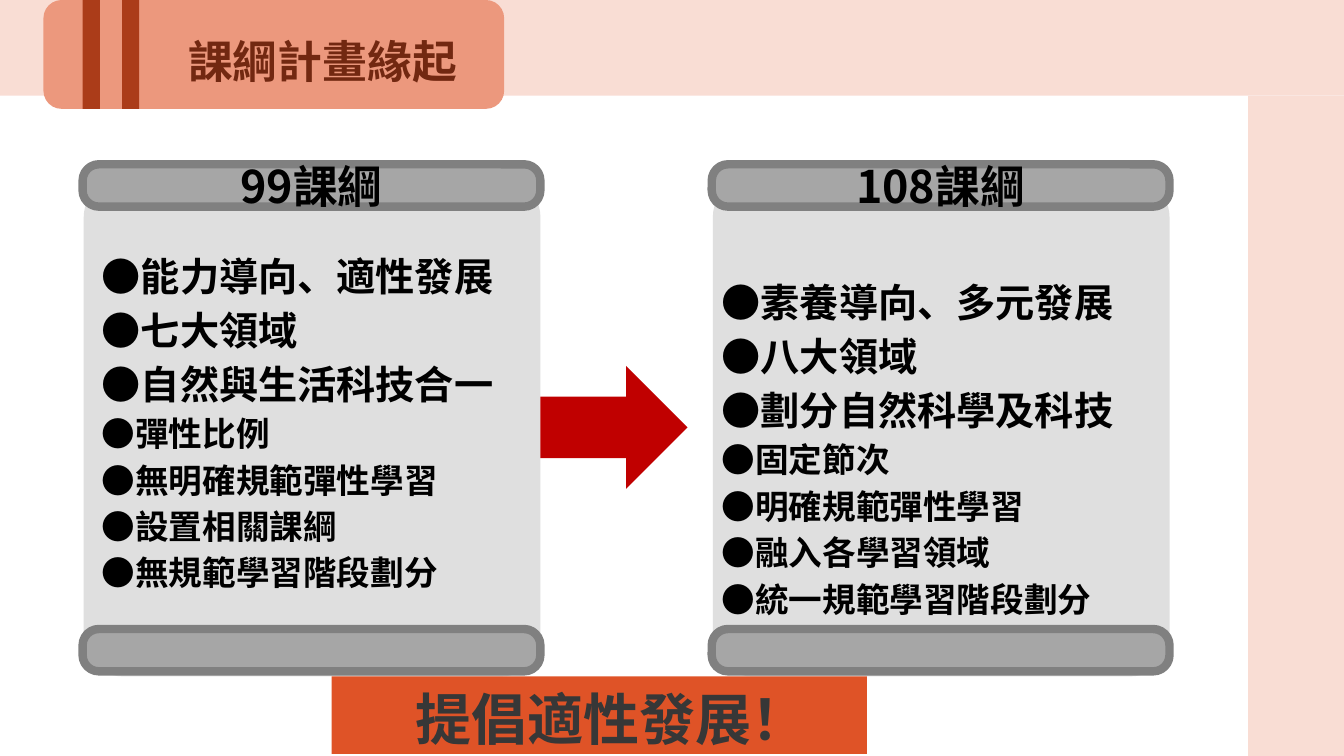
from dataclasses import dataclass
from typing import Optional

from lxml.etree import SubElement
from pptx import Presentation
from pptx.dml.color import RGBColor
from pptx.enum.shapes import MSO_SHAPE as SHAPE
from pptx.enum.text import MSO_ANCHOR as ANCHOR, PP_ALIGN as ALIGN
from pptx.oxml.ns import qn
from pptx.util import Inches, Pt

FONT = "Noto Sans CJK SC"
BLACK, PINK, RUST = "000000", "F9DDD4", "AB3C19"
LIGHT, GREY, DARK = "DFDFDF", "A6A6A6", "808080"

prs = Presentation()
prs.slide_width, prs.slide_height = Inches(13.33), Inches(7.5)
slide = prs.slides.add_slide(prs.slide_layouts[6])


@dataclass
class Box:
    """Position and size in percent of the slide's width and height."""
    x: float
    y: float
    w: float
    h: float

    def emu(self) -> list[int]:
        across, down = prs.slide_width / 100, prs.slide_height / 100
        return [round(self.x * across), round(self.y * down),
                round(self.w * across), round(self.h * down)]


@dataclass
class Panel:
    x: float
    heading: str
    text: Box
    large: list[str]
    small: list[str]


def color(value: str) -> RGBColor:
    return RGBColor.from_string(value)


def add_block(box: Box, fill: str, kind=SHAPE.RECTANGLE,
              corner: Optional[float] = None, border: Optional[str] = None):
    s = slide.shapes.add_shape(kind, *box.emu())
    s.shadow.inherit = False
    s.fill.solid()
    s.fill.fore_color.rgb = color(fill)
    if corner is not None:
        s.adjustments[0] = corner
    if border:
        s.line.color.rgb = color(border)
        s.line.width = Pt(6)
    else:
        s.line.fill.background()
    return s


def write(tf, lines: list[str], sizes: list[int], fill: str = BLACK,
          align=ALIGN.LEFT, spacing: Optional[float] = None) -> None:
    tf.text = "\n".join(lines)
    for p, size in zip(tf.paragraphs, sizes):
        p.alignment = align
        p.line_spacing = spacing
        for r in p.runs:
            r.font.name, r.font.size, r.font.bold = FONT, Pt(size), True
            r.font.color.rgb = color(fill)
            SubElement(r.font._element, qn("a:ea"), typeface=FONT)


def add_text(box: Box, wrap: bool = True):
    tf = slide.shapes.add_textbox(*box.emu()).text_frame
    tf.word_wrap = wrap
    return tf


def add_panel(panel: Panel) -> None:
    add_block(Box(panel.x + 0.08, 23.6, 33.98, 65.87), LIGHT,
              SHAPE.ROUNDED_RECTANGLE, 0.085)
    top, _ = [add_block(Box(panel.x, y, 34.06, 5.6), GREY,
                        SHAPE.ROUNDED_RECTANGLE, 0.385, DARK)
              for y in (21.73, 83.2)]
    top.text_frame.vertical_anchor = ANCHOR.MIDDLE
    write(top.text_frame, [panel.heading], [32], align=ALIGN.CENTER)
    write(add_text(panel.text),
          [f"●{line}" for line in panel.large + panel.small],
          [28] * len(panel.large) + [24] * len(panel.small), spacing=1.15)


PANELS = [
    Panel(52.96, "108課綱", Box(52.96, 35.2, 50.04, 48.8),
          ["素養導向、多元發展", "八大領域", "劃分自然科學及科技"],
          ["固定節次", "明確規範彈性學習", "融入各學習領域", "統一規範學習階段劃分"]),
    Panel(6.15, "99課綱", Box(6.83, 31.73, 50.04, 47.73),
          ["能力導向、適性發展", "七大領域", "自然與生活科技合一"],
          ["彈性比例", "無明確規範彈性學習", "設置相關課綱", "無規範學習階段劃分"]),
]

# Frame along the top and right edges
add_block(Box(0, 0, 100, 12.67), PINK)
add_block(Box(92.87, 12.67, 7.13, 87.33), PINK)

# Title tab with two stripes
add_block(Box(3.23, 0, 34.28, 14.4), "EC987D", SHAPE.ROUNDED_RECTANGLE)
write(add_text(Box(11.1, 2.8, 25.81, 8.93)), ["課綱計畫緣起"], [32], "722811",
      ALIGN.CENTER, 1.15)
for x in (6.15, 9.08):
    add_block(Box(x, 0, 1.28, 14.4), RUST)

# Curriculum panels
for panel in PANELS:
    add_panel(panel)

# Slogan ribbon and arrow
add_block(Box(24.68, 89.47, 39.83, 10.27), "DF5327")
add_block(Box(40.21, 48.4, 10.95, 16.27), "C00000", SHAPE.RIGHT_ARROW)
write(add_text(Box(30.16, 89.87, 30.98, 10.27), wrap=False),
      ["提倡適性發展！"], [40], "373737")

prs.save("out.pptx")
